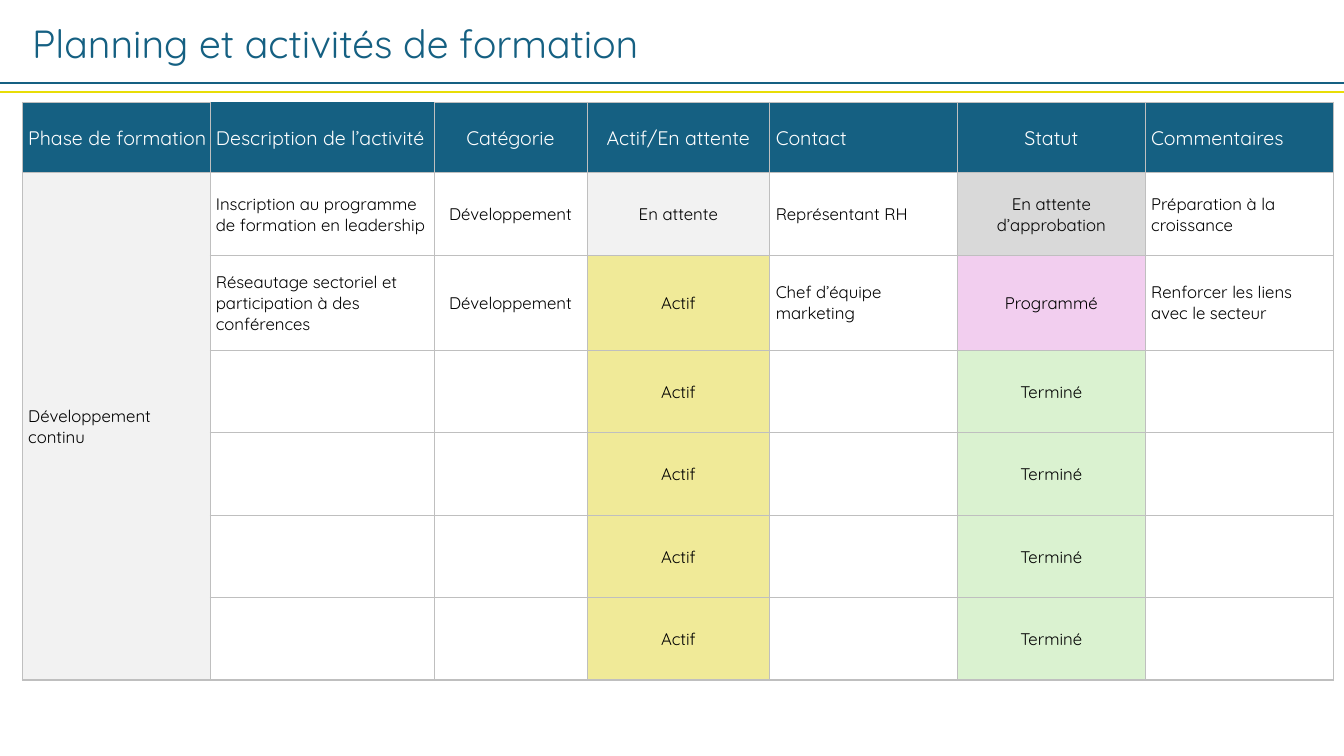
from lxml.etree import SubElement
from pptx import Presentation
from pptx.dml.color import RGBColor
from pptx.enum.shapes import MSO_CONNECTOR
from pptx.enum.text import MSO_ANCHOR, MSO_AUTO_SIZE, PP_ALIGN
from pptx.oxml import parse_xml
from pptx.oxml.ns import nsdecls, qn
from pptx.util import Cm, Pt

FONT = "Quicksand"
BLUE, YELLOW, GREY, WHITE = "156082", "E8DD06", "BFBFBF", "FFFFFF"
FILLS = {
    "En attente": "F2F2F2",
    "Actif": "F0EA98",
    "En attente d’approbation": "D9D9D9",
    "Programmé": "F2CEEF",
    "Terminé": "DAF2D0",
    "Développement continu": "F2F2F2",
}
WIDTHS = [4.73, 5.65, 3.85, 4.61, 4.73, 4.73, 4.73]
HEIGHTS = [1.78, 2.08, 2.39] + [2.08] * 4
CENTERED = {2, 3, 5}
ROWS = [
    ["Phase de formation", "Description de l’activité", "Catégorie", "Actif/En attente",
     "Contact", "Statut", "Commentaires"],
    ["Développement continu", "Inscription au programme de formation en leadership",
     "Développement", "En attente", "Représentant RH", "En attente d’approbation",
     "Préparation à la croissance"],
    ["", "Réseautage sectoriel et participation à des conférences", "Développement",
     "Actif", "Chef d’équipe marketing", "Programmé", "Renforcer les liens avec le secteur"],
] + [["", "", "", "Actif", "", "Terminé", ""]] * 4


def color(value):
    return RGBColor.from_string(value)


def write(tf, text, size=12, fill="000000", align=PP_ALIGN.LEFT):
    p = tf.paragraphs[0]
    p.alignment = align
    p.font.size = Pt(size)
    if text:
        r = p.add_run()
        r.text = text
        r.font.name = FONT
        r.font.size = Pt(size)
        r.font.color.rgb = color(fill)


def set_borders(cell, widths):
    tc_pr = cell._tc.get_or_add_tcPr()
    for i, (side, width) in enumerate(widths.items()):
        paint = f'<a:solidFill><a:srgbClr val="{GREY}"/></a:solidFill>' if width else "<a:noFill/>"
        ln = parse_xml(f'<a:ln{side} {nsdecls("a")} w="{Pt(width)}">{paint}</a:ln{side}>')
        tc_pr.insert(i, ln)


class Deck:
    """Hold the current slide and draw its elements in one style."""

    def __init__(self):
        self.prs = Presentation()
        self.prs.slide_width = Cm(33.87)
        self.prs.slide_height = Cm(19.05)
        self.s = self.prs.slides.add_slide(self.prs.slide_layouts[6])

    def title(self, text, x, y, w, h):
        tf = self.s.shapes.add_textbox(Cm(x), Cm(y), Cm(w), Cm(h)).text_frame
        tf.word_wrap = True
        tf.auto_size = MSO_AUTO_SIZE.SHAPE_TO_FIT_TEXT
        write(tf, text, size=28, fill=BLUE)

    def rule(self, y, fill):
        line = self.s.shapes.add_connector(
            MSO_CONNECTOR.STRAIGHT, 0, Cm(y), self.prs.slide_width, Cm(y))
        line.line.color.rgb = color(fill)
        line.line.width = Pt(1.5)
        SubElement(line._element.spPr, qn("a:effectLst"))

    def table(self, rows, x, y):
        frame = self.s.shapes.add_table(
            len(rows), len(WIDTHS), Cm(x), Cm(y), Cm(sum(WIDTHS)), Cm(sum(HEIGHTS)))
        table = frame.table
        table.first_row = table.horz_banding = False
        for column, width in zip(table.columns, WIDTHS):
            column.width = Cm(width)
        for row, height in zip(table.rows, HEIGHTS):
            row.height = Cm(height)
        for i, texts in enumerate(rows):
            for j, text in enumerate(texts):
                self.cell(table.cell(i, j), text, i, j)
        table.cell(1, 0).merge(table.cell(len(rows) - 1, 0))

    def cell(self, cell, text, i, j):
        header, centered = i == 0, j in CENTERED
        cell.vertical_anchor = MSO_ANCHOR.MIDDLE
        cell.margin_left = Cm(0.03 if centered else 0.15)
        cell.margin_right = cell.margin_top = Cm(0.03)
        cell.margin_bottom = 0
        cell.fill.solid()
        cell.fill.fore_color.rgb = color(BLUE if header else FILLS.get(text, WHITE))
        write(cell.text_frame, text, size=14 if header else 12,
              fill=WHITE if header else "000000",
              align=PP_ALIGN.CENTER if centered else PP_ALIGN.LEFT)
        last = i == len(ROWS) - 1 or (i, j) == (1, 0)
        top = 0 if (i, j) == (0, 1) else 0.5
        set_borders(cell, {"L": 0.5, "R": 0.5, "T": top, "B": 1.5 if last else 0.5})


def main():
    deck = Deck()
    deck.table(ROWS, 0.56, 2.57)
    deck.title("Planning et activités de formation", 0.56, 0.36, 20.52, 1.45)
    deck.rule(2.09, BLUE)
    deck.rule(2.32, YELLOW)
    deck.prs.save("out.pptx")


if __name__ == "__main__":
    main()
